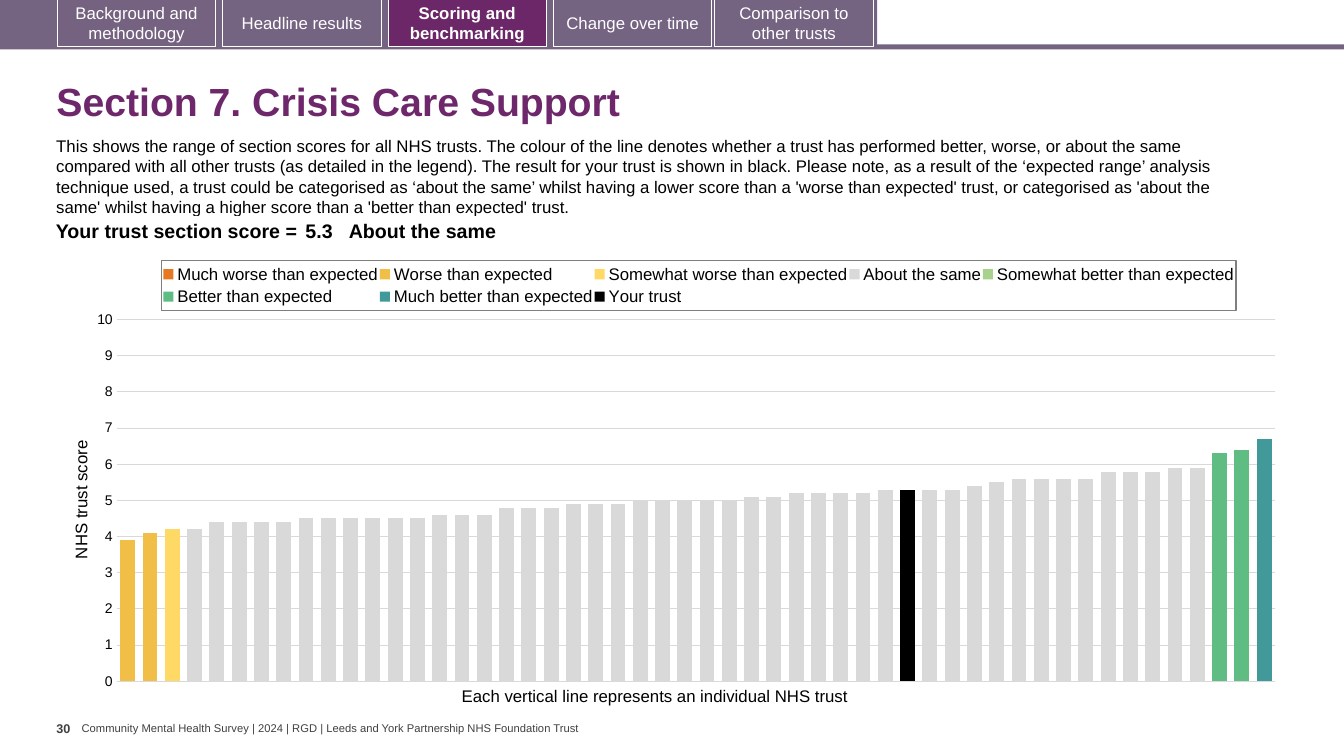
from copy import deepcopy

from lxml.etree import SubElement
from pptx import Presentation
from pptx.chart.data import CategoryChartData
from pptx.dml.color import RGBColor
from pptx.enum.chart import XL_CHART_TYPE, XL_LEGEND_POSITION, XL_TICK_MARK
from pptx.enum.shapes import MSO_SHAPE
from pptx.enum.text import MSO_ANCHOR, PP_ALIGN
from pptx.oxml import parse_xml
from pptx.oxml.ns import nsdecls, qn
from pptx.util import Inches, Pt

COLORS = {
    "bar": "756382", "tab": "746280", "active": "6B2768", "title": "6D276A",
    "white": "FFFFFF", "black": "000000", "footer": "404040",
    "grid": "D9D9D9", "border": "7F7F7F",
}
TABS = [
    ("Background and methodology", 0.57, "tab"),
    ("Headline results", 2.21, "bar"),
    ("Scoring and benchmarking", 3.85, "active"),
    ("Change over time", 5.49, "bar"),
    ("Comparison to other trusts", 7.09, "bar"),
]
INTRO = (
    "This shows the range of section scores for all NHS trusts. The colour of the line "
    "denotes whether a trust has performed better, worse, or about the same compared with "
    "all other trusts (as detailed in the legend). The result for your trust is shown in "
    "black. Please note, as a result of the ‘expected range’ analysis technique used, a "
    "trust could be categorised as ‘about the same’ whilst having a lower score than a "
    "'worse than expected' trust, or categorised as 'about the same' whilst having a "
    "higher score than a 'better than expected' trust."
)
ABOUT_THE_SAME = (
    [4.2] + [4.4] * 4 + [4.5] * 6 + [4.6] * 3 + [4.8] * 3 + [4.9] * 3 + [5] * 5
    + [5.1] * 2 + [5.2] * 4 + [5.3] * 4 + [5.4, 5.5] + [5.6] * 4 + [5.8] * 3 + [5.9] * 2
)
TRUSTS = 52
SERIES = [
    ("Much worse than expected", "E87722", 0, []),
    ("Worse than expected", "F1BE48", 0, [3.9, 4.1]),
    ("Somewhat worse than expected", "FFD966", 2, [4.2]),
    ("About the same", "D9D9D9", 3, ABOUT_THE_SAME),
    ("Somewhat better than expected", "A9D18E", 0, []),
    ("Better than expected", "5FBD83", 49, [6.3, 6.4]),
    ("Much better than expected", "419999", 51, [6.7]),
    ("Your trust", "000000", 35, [5.3]),
]


class SlideBuilder:
    def __init__(self, prs, font="Arial"):
        self.s = prs.slides.add_slide(prs.slide_layouts[5])
        self.font = font

    def color(self, name):
        return RGBColor.from_string(COLORS[name])

    def style(self, font, size, color="black", bold=False):
        font.name, font.size, font.bold = self.font, Pt(size), bold
        font.color.rgb = self.color(color)

    def title(self, text, box):
        sp = self.s.shapes.title
        sp.left, sp.top, sp.width, sp.height = map(Inches, box)
        tf = sp.text_frame
        tf.text = text
        tf.vertical_anchor = MSO_ANCHOR.MIDDLE
        p = tf.paragraphs[0]
        p.alignment, p.line_spacing = PP_ALIGN.LEFT, 0.9
        self.style(p.font, 28, "title", True)

    def rect(self, box, fill, text="", bold=False):
        sp = self.s.shapes.add_shape(MSO_SHAPE.RECTANGLE, *map(Inches, box))
        sp.shadow.inherit = False
        sp.fill.solid()
        sp.fill.fore_color.rgb = self.color(fill)
        if not text:
            sp.line.fill.background()
            return
        sp.line.color.rgb = self.color("white")
        sp.line.width = Pt(0.75)
        tf = sp.text_frame
        tf.text = text
        tf.vertical_anchor = MSO_ANCHOR.MIDDLE
        p = tf.paragraphs[0]
        p.alignment = PP_ALIGN.CENTER
        self.style(p.font, 12, "white", bold)

    def text(self, text, box, size, color="black", bold=False, wrap=True,
             insets=(0.1, 0.05), anchor=MSO_ANCHOR.TOP):
        tf = self.s.shapes.add_textbox(*map(Inches, box)).text_frame
        tf.text = text
        tf.word_wrap, tf.vertical_anchor = wrap, anchor
        tf.margin_left = tf.margin_right = Inches(insets[0])
        tf.margin_top = tf.margin_bottom = Inches(insets[1])
        self.style(tf.paragraphs[0].font, size, color, bold)

    def table(self, cells, box):
        table = self.s.shapes.add_table(1, len(cells), *map(Inches, box)).table
        table.first_row = table.horz_banding = False
        for i, (text, width, inset, align) in enumerate(cells):
            table.columns[i].width = Inches(width)
            cell = table.cell(0, i)
            cell.fill.background()
            cell.text = text
            cell.margin_left = cell.margin_right = Inches(inset)
            cell.margin_top = cell.margin_bottom = Inches(0.04)
            p = cell.text_frame.paragraphs[0]
            p.alignment = align
            self.style(p.font, 14, bold=True)

    def layout(self, element, index, inner=False, **percents):
        for old in element.findall(qn("c:layout")):
            element.remove(old)
        layout = parse_xml(f"<c:layout {nsdecls('c')}><c:manualLayout/></c:layout>")
        values = {"layoutTarget": "inner"} if inner else {}
        values |= {"xMode": "edge", "yMode": "edge"}
        values |= {tag: percent / 100 for tag, percent in percents.items()}
        for tag, value in values.items():
            SubElement(layout[0], qn(f"c:{tag}")).set("val", str(value))
        element.insert(index, layout)

    def chart(self, series, box):
        data = CategoryChartData()
        data.categories = [str(i + 1) for i in range(TRUSTS)]
        for name, _, start, scores in series:
            rest = TRUSTS - start - len(scores)
            data.add_series(name, [None] * start + scores + [None] * rest)
        chart = self.s.shapes.add_chart(
            XL_CHART_TYPE.COLUMN_CLUSTERED, *map(Inches, box), data).chart
        self.style(chart.font, 10)
        chart.has_title = False
        plot = chart.plots[0]
        plot.gap_width, plot.overlap, plot.vary_by_categories = 50, 100, False
        for ser, (_, color, _, _) in zip(plot.series, series):
            ser.format.fill.solid()
            ser.format.fill.fore_color.rgb = RGBColor.from_string(color)
        chart.category_axis.visible = False
        self.value_axis(chart.value_axis)
        area = chart._chartSpace.chart.plotArea
        self.second_axis(area)
        self.layout(area, 0, True, x=4, y=15.8, w=94.6, h=80.8)
        self.legend(chart)

    def second_axis(self, area):
        bars = area.find(qn("c:barChart"))
        right = deepcopy(bars)
        bars.remove(bars.findall(qn("c:ser"))[-1])
        for ser in right.findall(qn("c:ser"))[:-1]:
            right.remove(ser)
        for ax, number in zip(right.findall(qn("c:axId")), ("5001", "5002")):
            ax.set("val", number)
        bars.addnext(right)
        axes = f"""<c:plotArea {nsdecls('c', 'a')}>
            <c:valAx><c:axId val="5002"/><c:scaling><c:orientation val="minMax"/>
            <c:max val="10"/><c:min val="0"/></c:scaling><c:delete val="0"/>
            <c:axPos val="r"/><c:numFmt formatCode="0" sourceLinked="0"/>
            <c:majorTickMark val="out"/><c:minorTickMark val="none"/>
            <c:tickLblPos val="none"/><c:spPr><a:ln><a:noFill/></a:ln></c:spPr>
            <c:crossAx val="5001"/><c:crosses val="max"/></c:valAx>
            <c:catAx><c:axId val="5001"/><c:scaling><c:orientation val="minMax"/>
            </c:scaling><c:delete val="1"/><c:axPos val="b"/>
            <c:crossAx val="5002"/><c:crosses val="autoZero"/></c:catAx></c:plotArea>"""
        last = area.find(qn("c:valAx"))
        for axis in reversed(list(parse_xml(axes))):
            last.addnext(axis)

    def value_axis(self, axis):
        axis.minimum_scale, axis.maximum_scale, axis.major_unit = 0, 10, 1
        axis.major_tick_mark = XL_TICK_MARK.NONE
        axis.format.line.fill.background()
        axis.tick_labels.number_format = "0"
        axis.tick_labels.number_format_is_linked = False
        self.style(axis.tick_labels.font, 10)
        grid = axis.major_gridlines.format.line
        grid.color.rgb, grid.width = self.color("grid"), Pt(0.75)
        tf = axis.axis_title.text_frame
        tf.text = "NHS trust score"
        self.style(tf.paragraphs[0].font, 12)
        self.layout(axis.axis_title._element, 1, x=0, y=42.1)

    def legend(self, chart):
        chart.has_legend = True
        legend = chart.legend
        legend.position = XL_LEGEND_POSITION.TOP
        legend.include_in_layout = False
        self.style(legend.font, 12)
        self.layout(legend._element, 1, x=7.68, y=2.66, w=87.7, h=11)
        border = parse_xml(
            f'<c:spPr {nsdecls("c", "a")}><a:ln w="9525"><a:solidFill>'
            f'<a:srgbClr val="{COLORS["border"]}"/></a:solidFill></a:ln></c:spPr>')
        legend._element.find(qn("c:txPr")).addprevious(border)


def main():
    prs = Presentation()
    prs.slide_width, prs.slide_height = Inches(13.33), Inches(7.5)
    b = SlideBuilder(prs)
    b.text("Community Mental Health Survey | 2024 | RGD | "
           "Leeds and York Partnership NHS Foundation Trust", (0.81, 7.16, 5.01, 0.13),
           8, "footer", wrap=False, insets=(0, 0), anchor=MSO_ANCHOR.MIDDLE)
    b.rect((0, 0.44, 13.33, 0.05), "bar")
    b.rect((0, 0, 8.7, 0.47), "bar")
    for label, left, fill in TABS:
        b.rect((left, -0.01, 1.57, 0.47), fill, label, fill == "active")
    b.title("Section 7. Crisis Care Support", (0.46, 0.67, 12.49, 0.72))
    b.text("30", (0.56, 7.1, 0.25, 0.4), 9, "footer", True, insets=(0, 0.05))
    b.text(INTRO, (0.46, 1.3, 12.13, 0.91), 12)
    b.text("Each vertical line represents an individual NHS trust",
           (4.48, 6.75, 4.11, 0.3), 12, wrap=False)
    b.chart(SERIES, (0.67, 2.47, 12.15, 4.44))
    b.table([("Your trust section score =", 2.63, 0.04, PP_ALIGN.RIGHT),
             ("5.3", 0.47, 0.04, PP_ALIGN.LEFT),
             ("About the same", 8.59, 0, PP_ALIGN.LEFT)], (0.36, 2.15, 11.69, 0.22))
    prs.save("out.pptx")


if __name__ == "__main__":
    main()
